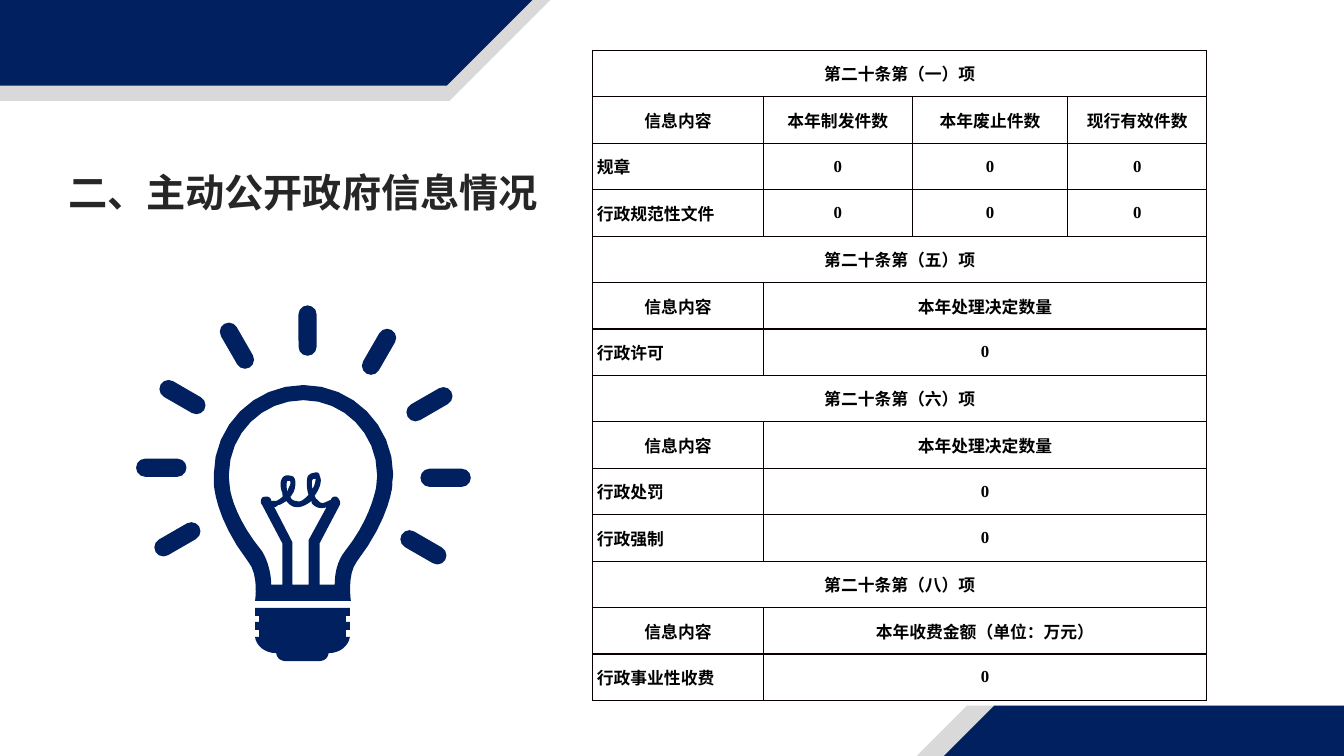
from dataclasses import dataclass

from lxml import etree
from pptx import Presentation, util as u
from pptx.dml.color import RGBColor
from pptx.enum import shapes, text
from pptx.oxml import ns


@dataclass(frozen=True)
class Theme:
    navy: str = "002060"
    grey: str = "D9D9D9"
    title: str = "262626"
    ink: str = "000000"
    border: str = "080000"
    paper: str = "FFFFFF"
    cjk: str = "Noto Sans CJK SC"
    latin: str = "Times New Roman"
    title_size: int = 28
    table_size: int = 12


T = Theme()

# Each section: heading, column headers, row labels
SECTIONS = [
    ("第二十条第（一）项", ["信息内容", "本年制发件数", "本年废止件数", "现行有效件数"],
     ["规章", "行政规范性文件"]),
    ("第二十条第（五）项", ["信息内容", "本年处理决定数量"], ["行政许可"]),
    ("第二十条第（六）项", ["信息内容", "本年处理决定数量"], ["行政处罚", "行政强制"]),
    ("第二十条第（八）项", ["信息内容", "本年收费金额（单位：万元）"], ["行政事业性收费"]),
]

# Bulb drawing in hundredths of an inch from the icon corner.
# Two numbers make a line point, six make a Bezier curve.
RAYS = [(170, 25, 90), (100, 40, 60), (46, 91, 30), (25, 161, 0), (41, 232, -30),
        (285, 240, 30), (307, 171, 0), (291, 98, -30), (241, 46, -60)]
GLASS_OUTSIDE = [
    (255, 168), (255, 119, 215, 79, 166, 79), (117, 79, 77, 119, 77, 168), (77, 176),
    (77, 177, 78, 211, 111, 254), (122, 267, 118, 293, 118, 293), (213, 293),
    (213, 293, 209, 267, 219, 254), (252, 211, 255, 177, 254, 176)]
LEG_GAP = [
    (155, 277), (155, 235), (154, 233), (137, 200), (138, 200, 139, 200, 141, 198),
    (143, 198, 146, 196, 149, 194), (151, 197, 155, 200, 158, 200),
    (163, 201, 169, 198, 174, 194), (174, 196), (177, 200, 181, 201, 183, 201),
    (185, 201), (186, 201, 187, 201, 189, 200), (171, 233), (171, 235), (171, 277)]
LEFT_LOOP = [
    (150, 174), (151, 174), (153, 174, 153, 174, 153, 177),
    (153, 178, 151, 181, 150, 185), (149, 180, 149, 176, 150, 174)]
RIGHT_LOOP = [
    (175, 173), (175, 172, 177, 172, 177, 172), (178, 172),
    (178, 173, 178, 177, 175, 182), (174, 178, 174, 174, 175, 173)]
GLASS_INSIDE = [
    (239, 170), (238, 181), (236, 190, 230, 215, 207, 244),
    (199, 254, 197, 267, 197, 277), (182, 277), (182, 236), (202, 198),
    (203, 196, 202, 192, 199, 190), (197, 189, 194, 190, 193, 193),
    (190, 194, 187, 196, 185, 196), (182, 196, 181, 194, 179, 192),
    (178, 192, 178, 190, 177, 189), (182, 182, 185, 174, 182, 169),
    (182, 166, 179, 165, 177, 166), (174, 166, 171, 168, 170, 170),
    (169, 174, 169, 182, 171, 188), (167, 192, 163, 196, 159, 194),
    (157, 194, 154, 193, 153, 190), (157, 185, 158, 181, 158, 176),
    (158, 173, 157, 169, 153, 169), (150, 168, 147, 169, 146, 170),
    (142, 174, 143, 181, 145, 186), (145, 188, 145, 189, 146, 189),
    (143, 192, 141, 193, 139, 194), (134, 194), (134, 193),
    (133, 190, 130, 189, 127, 190), (126, 190), (123, 192, 123, 196, 125, 198),
    (145, 236), (145, 277), (134, 277), (134, 267, 131, 254, 125, 244),
    (101, 215, 94, 190, 93, 181), (92, 170), (92, 168),
    (92, 127, 125, 94, 166, 94), (206, 94, 239, 127, 239, 168)]
SOCKET_LEFT = [
    (118, 300), (118, 308), (122, 308), (122, 314), (118, 314), (118, 322),
    (122, 322), (122, 329), (118, 329), (119, 337, 127, 345, 139, 345),
    (140, 351, 144, 353, 150, 353)]
SOCKET_AXIS = 165


def rgb(color):
    return RGBColor.from_string(color)


def paint(s, color):
    s.shadow.inherit = False
    s.fill.solid()
    s.fill.fore_color.rgb = rgb(color)
    s.line.fill.background()


def format_text(p, size, color, latin, align):
    p.alignment = align
    for r in p.runs:
        f = r.font
        f.size, f.bold, f.name = u.Pt(size), True, latin
        f.color.rgb = rgb(color)
        etree.SubElement(f._element, ns.qn("a:ea"), typeface=T.cjk)


def add_corner(slide, left, top, color):
    s = slide.shapes.add_shape(shapes.MSO_SHAPE.PARALLELOGRAM, u.Inches(left),
                               u.Inches(top), u.Inches(7.41), u.Inches(1.02))
    s.adjustments[0] = 1
    paint(s, color)


def add_title(slide, left, top, width, height):
    s = slide.shapes.title
    s.left, s.top, s.width, s.height = map(u.Inches, (left, top, width, height))
    tf = s.text_frame
    tf.text = "二、主动公开政府信息情况"
    tf.auto_size = text.MSO_AUTO_SIZE.NONE
    tf.vertical_anchor = text.MSO_ANCHOR.TOP
    format_text(tf.paragraphs[0], T.title_size, T.title, T.cjk, text.PP_ALIGN.CENTER)


def format_cell(cell):
    tcPr = cell._tc.get_or_add_tcPr()
    for side in ("lnL", "lnR", "lnT", "lnB"):
        ln = etree.SubElement(tcPr, ns.qn("a:" + side), w=str(u.Pt(1)))
        fill = etree.SubElement(ln, ns.qn("a:solidFill"))
        etree.SubElement(fill, ns.qn("a:srgbClr"), val=T.border)
    cell.fill.solid()
    cell.fill.fore_color.rgb = rgb(T.paper)
    cell.vertical_anchor = text.MSO_ANCHOR.MIDDLE
    cell.margin_left = cell.margin_right = u.Inches(0.04)
    cell.margin_top = cell.margin_bottom = 0


def add_disclosure_table(slide, left, top, height, widths):
    rows = []
    for heading, headers, labels in SECTIONS:
        rows += [[heading], headers]
        rows += [[label] + ["0"] * (len(headers) - 1) for label in labels]
    row_labels = {label for section in SECTIONS for label in section[2]}
    table = slide.shapes.add_table(
        len(rows), len(widths), u.Inches(left), u.Inches(top),
        u.Inches(sum(widths)), u.Inches(height)).table
    table.first_row = table.horz_banding = False
    for column, width in zip(table.columns, widths):
        column.width = u.Inches(width)
    for cell in table.iter_cells():
        format_cell(cell)
    last = len(widths) - 1
    for i, row in enumerate(rows):
        if len(row) <= last:  # the final entry spans the remaining columns
            table.cell(i, len(row) - 1).merge(table.cell(i, last))
        for j, value in enumerate(row):
            p = table.cell(i, j).text_frame.paragraphs[0]
            p.text = value
            align = text.PP_ALIGN.LEFT if value in row_labels else text.PP_ALIGN.CENTER
            format_text(p, T.table_size, T.ink, T.latin, align)


def flatten(segments, steps=8):
    points = []
    for seg in segments:
        if len(seg) == 2:
            points.append(seg)
            continue
        curve = [points[-1], seg[:2], seg[2:4], seg[4:]]
        for k in range(1, steps + 1):
            t = k / steps
            weights = ((1 - t) ** 3, 3 * t * (1 - t) ** 2, 3 * t * t * (1 - t), t ** 3)
            points.append(tuple(sum(w * c[axis] for w, c in zip(weights, curve))
                                for axis in (0, 1)))
    return points


def add_bulb(slide, left, top):
    group = slide.shapes.add_group_shape()

    def place(point):
        return u.Inches(left + point[0] / 100), u.Inches(top + point[1] / 100)

    def add_outline(contours):
        first, *holes = [[place(point) for point in c] for c in contours]
        builder = group.shapes.build_freeform(*first[0])
        builder.add_line_segments(first[1:], close=True)
        for hole in holes:
            builder.move_to(*hole[0])
            builder.add_line_segments(hole[1:], close=True)
        paint(builder.convert_to_shape(), T.navy)

    # Rays
    for x, y, angle in RAYS:
        s = group.shapes.add_shape(shapes.MSO_SHAPE.ROUNDED_RECTANGLE,
                                   *place((x - 25, y - 9)), u.Inches(0.5), u.Inches(0.18))
        s.adjustments[0] = 0.5
        s.rotation = angle
        paint(s, T.navy)
    # Glass with filament, then socket
    add_outline(map(flatten, (GLASS_OUTSIDE, LEG_GAP, LEFT_LOOP, RIGHT_LOOP, GLASS_INSIDE)))
    half = flatten(SOCKET_LEFT)
    add_outline([half + [(2 * SOCKET_AXIS - x, y) for x, y in reversed(half)]])


def main():
    prs = Presentation()
    prs.slide_width, prs.slide_height = u.Inches(13.33), u.Inches(7.5)
    slide = prs.slides.add_slide(prs.slide_layouts[5])
    # Corner bands
    for left, top, color in [(-1.93, -0.02, T.grey), (-1.96, -0.17, T.navy),
                             (8.57, 7, T.grey), (8.84, 7, T.navy)]:
        add_corner(slide, left, top, color)
    add_title(slide, 0.13, 1.62, 5.75, 0.56)
    add_disclosure_table(slide, 5.88, 0.5, 6.45, [1.69, 1.48, 1.54, 1.38])
    add_bulb(slide, 1.35, 3.03)
    prs.save("out.pptx")


if __name__ == "__main__":
    main()
